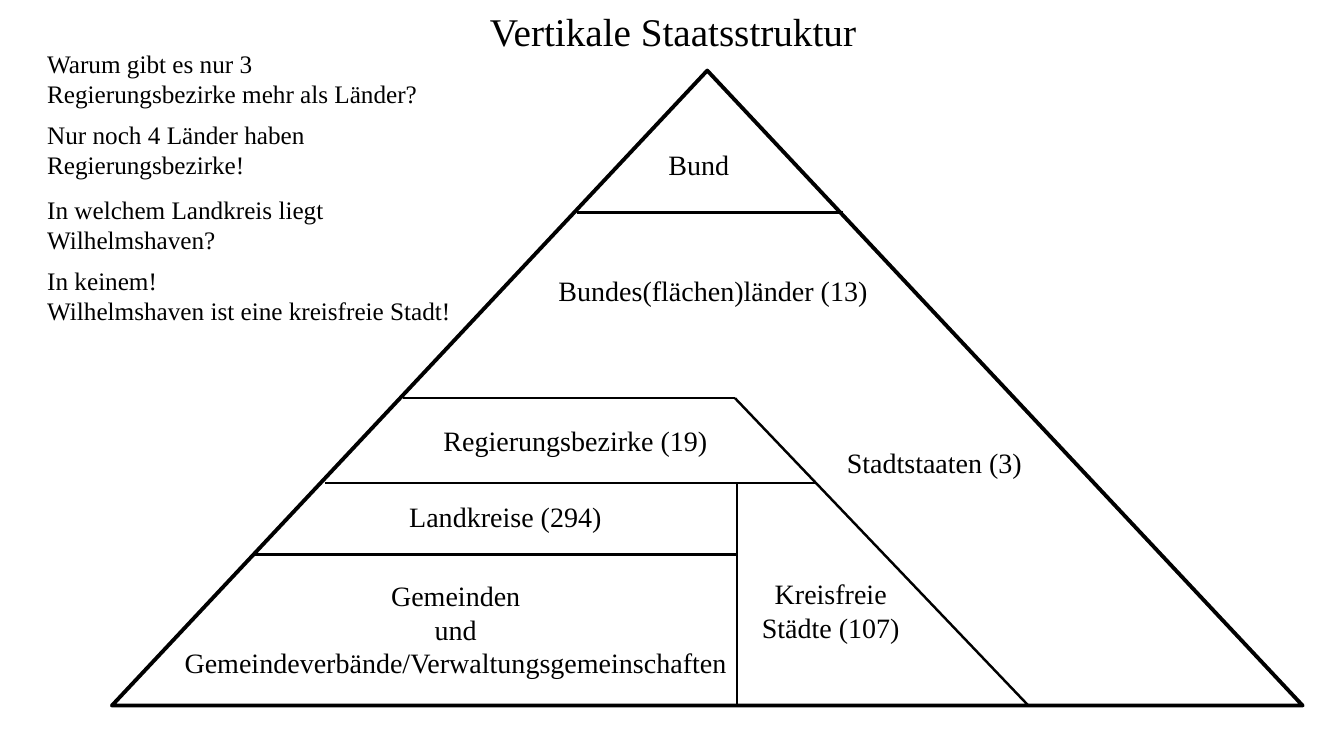
"""Build the slide on the vertical structure of the German state."""
from dataclasses import dataclass

from lxml import etree
from pptx import Presentation
from pptx import util as u
from pptx.dml.color import RGBColor
from pptx.enum import shapes, text
from pptx.oxml.ns import qn

FONT = "Times New Roman"
INK = "000000"
LEFT, CENTER = text.PP_ALIGN.LEFT, text.PP_ALIGN.CENTER
TOP, MIDDLE = text.MSO_ANCHOR.TOP, text.MSO_ANCHOR.MIDDLE


@dataclass(frozen=True)
class Caption:
    left: float
    top: float
    width: float
    height: float
    lines: tuple[str, ...]
    size: int = 20
    align: text.PP_ALIGN = CENTER
    anchor: text.MSO_ANCHOR = TOP
    wrap: bool = False


@dataclass(frozen=True)
class Border:
    x1: float
    y1: float
    x2: float
    y2: float


def color(value: str) -> RGBColor:
    return RGBColor.from_string(value)


def question(top: float, width: float, height: float, *lines: str) -> Caption:
    return Caption(0.37, top, width, height, lines, 18, LEFT, wrap=True)


def draw_caption(slide, caption: Caption) -> None:
    box = slide.shapes.add_textbox(
        u.Inches(caption.left), u.Inches(caption.top),
        u.Inches(caption.width), u.Inches(caption.height))
    frame = box.text_frame
    frame.word_wrap = caption.wrap
    frame.vertical_anchor = caption.anchor
    if not caption.wrap:
        frame.auto_size = text.MSO_AUTO_SIZE.SHAPE_TO_FIT_TEXT
    for index, line in enumerate(caption.lines):
        paragraph = frame.add_paragraph() if index else frame.paragraphs[0]
        paragraph.alignment = caption.align
        run = paragraph.add_run()
        run.text = line
        run.font.name = FONT
        run.font.size = u.Pt(caption.size)
        run.font.color.rgb = color(INK)


def draw_pyramid(slide) -> None:
    pyramid = slide.shapes.add_shape(
        shapes.MSO_SHAPE.ISOSCELES_TRIANGLE,
        u.Inches(1.11), u.Inches(0.7), u.Inches(11.81), u.Inches(6.3))
    pyramid.shadow.inherit = False
    pyramid.fill.background()
    pyramid.line.color.rgb = color(INK)
    pyramid.line.width = u.Pt(2.75)


def draw_border(slide, border: Border) -> None:
    line = slide.shapes.add_connector(
        shapes.MSO_CONNECTOR.STRAIGHT,
        u.Inches(border.x1), u.Inches(border.y1),
        u.Inches(border.x2), u.Inches(border.y2))
    line.line.color.rgb = color(INK)
    line.line.width = u.Pt(1.75)
    etree.SubElement(line._element.spPr, qn("a:effectLst"))


BASE, DISTRICT_TOP, COUNTY_TOP, CITY_LEFT = 7, 3.95, 4.79, 7.31

BORDERS = (
    Border(5.72, 2.11, 8.36, 2.11),
    Border(4, DISTRICT_TOP, 7.29, DISTRICT_TOP),
    Border(7.29, DISTRICT_TOP, 10.2, BASE),
    Border(3.22, COUNTY_TOP, 8.08, COUNTY_TOP),
    Border(CITY_LEFT, COUNTY_TOP, CITY_LEFT, BASE),
    Border(2.53, 5.5, CITY_LEFT, 5.5),
)

CAPTIONS = (
    Caption(0.02, 0.01, 13.31, 0.59, ("Vertikale Staatsstruktur",), 28,
            anchor=MIDDLE, wrap=True),
    Caption(6.53, 1.41, 0.81, 0.44, ("Bund",), align=LEFT),
    Caption(5.44, 2.66, 3.31, 0.44, ("Bundes(flächen)länder (13)",), align=LEFT),
    Caption(4.3, 4.15, 2.84, 0.44, ("Regierungsbezirke (19)",), align=LEFT),
    Caption(8.3, 4.37, 2.02, 0.44, ("Stadtstaaten (3)",), align=LEFT),
    Caption(3.96, 4.91, 2.12, 0.44, ("Landkreise (294)",), align=LEFT),
    Caption(1.62, 5.69, 5.8, 1.11,
            ("Gemeinden", "und", "Gemeindeverbände/Verwaltungsgemeinschaften")),
    Caption(7.44, 5.67, 1.6, 0.77, ("Kreisfreie", "Städte (107)")),
    question(0.43, 3.96, 0.84,
             "Warum gibt es nur 3 Regierungsbezirke mehr als Länder?"),
    question(1.13, 3.96, 0.84, "Nur noch 4 Länder haben Regierungsbezirke!"),
    question(1.88, 3.96, 0.84, "In welchem Landkreis liegt Wilhelmshaven?"),
    question(2.58, 4.32, 1.04, "In keinem!",
             "Wilhelmshaven ist eine kreisfreie Stadt!"),
)


def main() -> None:
    deck = Presentation()
    deck.slide_width, deck.slide_height = u.Inches(13.33), u.Inches(7.5)
    slide = deck.slides.add_slide(deck.slide_layouts[6])
    draw_pyramid(slide)
    for border in BORDERS:
        draw_border(slide, border)
    for caption in CAPTIONS:
        draw_caption(slide, caption)
    deck.save("out.pptx")


if __name__ == "__main__":
    main()
